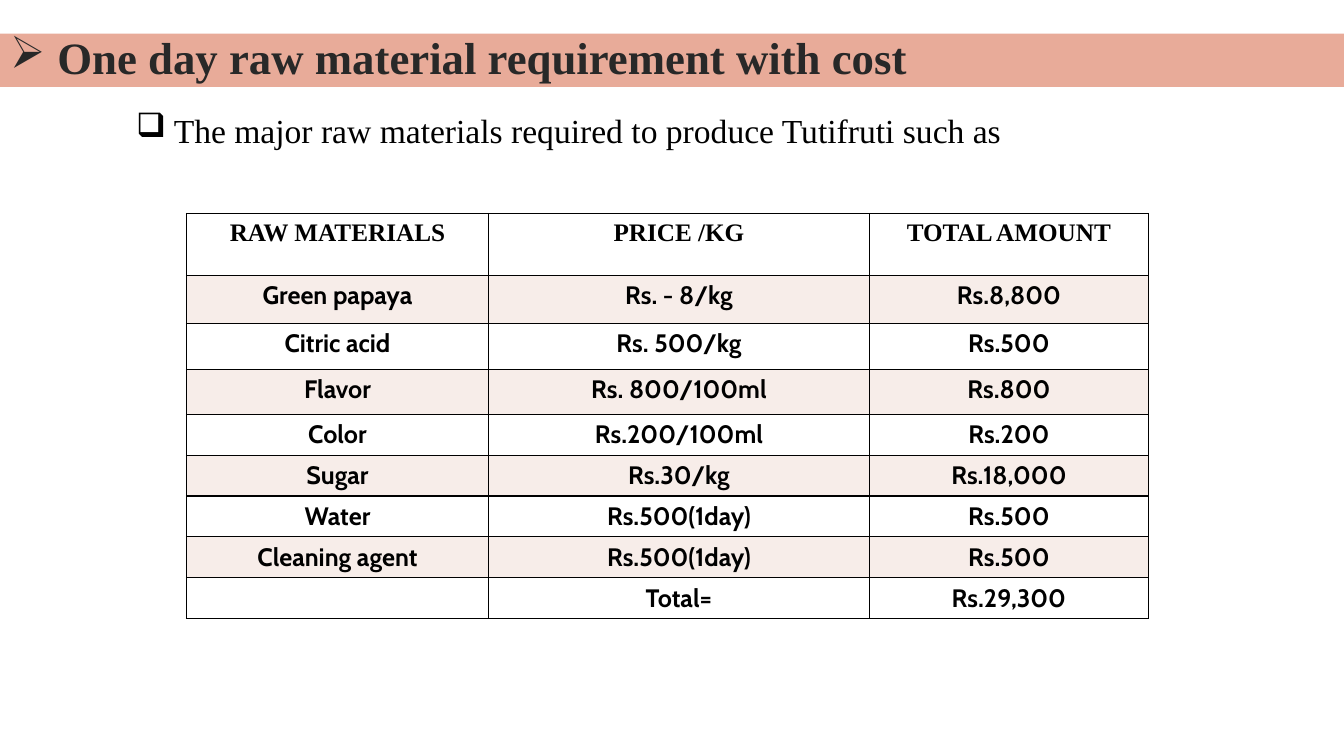
"""Build the slide listing one day's raw material costs."""
from lxml import etree
from pptx import Presentation
from pptx import util as u
from pptx.dml.color import RGBColor
from pptx.enum import text
from pptx.oxml import ns

TITLE = "One day raw material requirement with cost"
INTRO = "The major raw materials required to produce Tutifruti such as"
ROWS = [
    ("RAW MATERIALS", "PRICE /KG", "TOTAL AMOUNT"),
    ("Green papaya", "Rs. - 8/kg", "Rs.8,800"),
    ("Citric acid", "Rs. 500/kg", "Rs.500"),
    ("Flavor", "Rs. 800/100ml", "Rs.800"),
    ("Color", "Rs.200/100ml", "Rs.200"),
    ("Sugar", "Rs.30/kg", "Rs.18,000"),
    ("Water", "Rs.500(1day)", "Rs.500"),
    ("Cleaning agent", "Rs.500(1day)", "Rs.500"),
    ("", "Total=", "Rs.29,300"),
]
COLUMN_WIDTHS = [7.61, 9.6, 7.03]
ROW_HEIGHTS = [1.56, 1.21, 1.16, 1.13] + [1.03] * 5
COLORS = {"banner": "E8AB99", "title": "282828", "ink": "000000", "band": "F7EDE9"}
SERIF, SANS = "Times New Roman", "Cabin"


def color(name):
    return RGBColor.from_string(COLORS[name])


def format_runs(paragraph, font, size, ink, bold):
    for run in paragraph.runs:
        run.font.name = font
        run.font.size = u.Pt(size)
        run.font.bold = bold
        run.font.color.rgb = color(ink)


def add_bullet(paragraph, character, indent):
    properties = paragraph._p.get_or_add_pPr()
    properties.set("marL", str(u.Cm(indent)))
    properties.set("indent", str(-u.Cm(indent)))
    etree.SubElement(properties, ns.qn("a:buChar"), char=character)


def add_borders(cell):
    properties = cell._tc.get_or_add_tcPr()
    for side in ("lnL", "lnR", "lnT", "lnB"):
        line = etree.SubElement(properties, ns.qn(f"a:{side}"), w=str(u.Pt(1)))
        fill = etree.SubElement(line, ns.qn("a:solidFill"))
        etree.SubElement(fill, ns.qn("a:srgbClr"), val=COLORS["ink"])


def add_title(slide):
    title = slide.shapes.title
    title.left, title.top, title.width, title.height = (
        u.Cm(0), u.Cm(0.85), u.Cm(33.87), u.Cm(1.34))
    title.fill.solid()
    title.fill.fore_color.rgb = color("banner")
    frame = title.text_frame
    frame.text = TITLE
    frame.auto_size = text.MSO_AUTO_SIZE.NONE
    frame.vertical_anchor = text.MSO_ANCHOR.MIDDLE
    paragraph = frame.paragraphs[0]
    add_bullet(paragraph, "➢", 1.19)
    paragraph.alignment = text.PP_ALIGN.LEFT
    paragraph.line_spacing = 0.9
    format_runs(paragraph, SERIF, 32, "title", True)


def add_intro(slide):
    box = slide.shapes.add_textbox(u.Cm(3.18), u.Cm(2.64), u.Cm(27.5), u.Cm(2.31))
    frame = box.text_frame
    frame.word_wrap = True
    frame.text = INTRO
    paragraph = frame.paragraphs[0]
    add_bullet(paragraph, "❑", 0.95)
    format_runs(paragraph, SERIF, 24, "ink", False)


def add_cost_table(slide):
    table = slide.shapes.add_table(
        len(ROWS), len(COLUMN_WIDTHS), u.Cm(4.7), u.Cm(5.38),
        u.Cm(sum(COLUMN_WIDTHS)), u.Cm(sum(ROW_HEIGHTS))).table
    table.first_row = table.horz_banding = False
    for column, width in zip(table.columns, COLUMN_WIDTHS):
        column.width = u.Cm(width)
    for index, (row, height, values) in enumerate(zip(table.rows, ROW_HEIGHTS, ROWS)):
        row.height = u.Cm(height)
        for cell, value in zip(row.cells, values):
            add_borders(cell)
            if index % 2:
                cell.fill.solid()
                cell.fill.fore_color.rgb = color("band")
            else:
                cell.fill.background()
            cell.text_frame.text = value
            paragraph = cell.text_frame.paragraphs[0]
            paragraph.alignment = text.PP_ALIGN.CENTER
            format_runs(paragraph, SANS if index else SERIF, 18, "ink", True)


def main():
    presentation = Presentation()
    presentation.slide_width, presentation.slide_height = u.Cm(33.87), u.Cm(19.05)
    slide = presentation.slides.add_slide(presentation.slide_layouts[5])
    add_title(slide)
    add_intro(slide)
    add_cost_table(slide)
    presentation.save("out.pptx")


if __name__ == "__main__":
    main()
